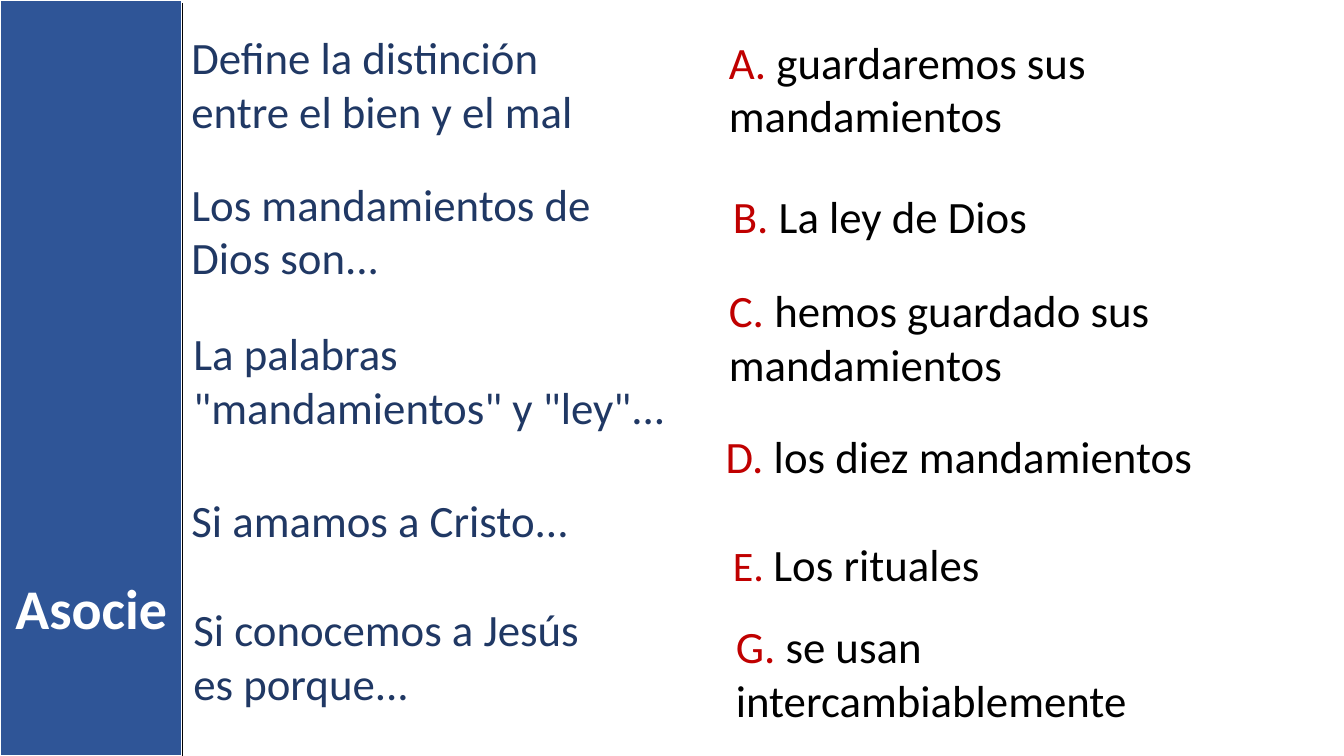
from dataclasses import dataclass

from lxml import etree
from pptx import Presentation
from pptx import util as u
from pptx.dml.color import RGBColor
from pptx.enum import shapes, text
from pptx.oxml.ns import qn


@dataclass(frozen=True)
class Theme:
    font: str = "Calibri"
    white: RGBColor = RGBColor(0xFF, 0xFF, 0xFF)
    black: RGBColor = RGBColor(0, 0, 0)
    sidebar: RGBColor = RGBColor(0x2F, 0x55, 0x97)
    prompt: RGBColor = RGBColor(0x20, 0x38, 0x64)
    letter: RGBColor = RGBColor(0xC0, 0, 0)
    title_size: u.Pt = u.Pt(40)
    body_size: u.Pt = u.Pt(32)
    small_letter_size: u.Pt = u.Pt(30)


theme = Theme()
presentation = Presentation()
presentation.slide_width = u.Inches(13.33)
presentation.slide_height = u.Inches(7.5)
slide = presentation.slides.add_slide(presentation.slide_layouts[5])


def box(left, top, width, height):
    """Turn percentages of the slide's width and height into lengths."""
    across, down = presentation.slide_width / 100, presentation.slide_height / 100
    return [round(length) for length in
            (left * across, top * down, width * across, height * down)]


def add_text(left, top, width, lines, runs):
    """Add one wrapped paragraph made of (words, colour, size) runs."""
    height = 8.53 if lines == 1 else 15.73
    frame = slide.shapes.add_textbox(*box(left, top, width, height)).text_frame
    frame.word_wrap = True
    frame.auto_size = text.MSO_AUTO_SIZE.SHAPE_TO_FIT_TEXT
    paragraph = frame.paragraphs[0]
    paragraph.font.name = theme.font
    for words, colour, size in runs:
        run = paragraph.add_run()
        run.text = words
        run.font.color.rgb = colour
        run.font.size = size


# Sidebar
SIDEBAR_WIDTH = 13.58
sidebar = slide.shapes.add_shape(shapes.MSO_SHAPE.RECTANGLE, *box(0, 0, SIDEBAR_WIDTH, 100))
sidebar.shadow.inherit = False
sidebar.fill.solid()
sidebar.fill.fore_color.rgb = theme.sidebar
sidebar.line.color.rgb = theme.white
sidebar.line.width = u.Pt(1.5)

# Prompts: left, top, width, lines, words
prompts = [
    (13.5, 3.33, 33.23, 2, "Define la distinción entre el bien y el mal"),
    (13.5, 22.67, 34.66, 2, "Los mandamientos de Dios son..."),
    (13.65, 42.4, 38.11, 2, 'La palabras "mandamientos" y "ley"...'),
    (13.5, 64.53, 34.51, 1, "Si amamos a Cristo..."),
    (13.65, 78.93, 33.08, 2, "Si conocemos a Jesús es porque..."),
]
for left, top, width, lines, words in prompts:
    add_text(left, top, width, lines, [(words, theme.prompt, theme.body_size)])

# Answers: left, top, width, lines, letter, words
answers = [
    (53.49, 3.87, 45.39, 2, "A", "guardaremos sus mandamientos"),
    (53.79, 24.27, 44.41, 1, "B", "La ley de Dios"),
    (53.49, 36.8, 43.06, 2, "C", "hemos guardado sus mandamientos"),
    (53.26, 56, 43.51, 1, "D", "los diez mandamientos"),
    (53.79, 70.4, 41.49, 1, "E", "Los rituales"),
    (54.01, 81.2, 41.94, 2, "G", "se usan intercambiablemente"),
]
for left, top, width, lines, letter, words in answers:
    letter_size = theme.small_letter_size if letter == "E" else theme.body_size
    add_text(left, top, width, lines, [
        (f"{letter}. ", theme.letter, letter_size),
        (words, theme.black, theme.body_size),
    ])

# Title, brought in front of the sidebar
title = slide.shapes.title
title.left, title.top, title.width, title.height = box(0, 75.2, SIDEBAR_WIDTH, 10.27)
title.text_frame.text = "Asocie"
title.text_frame.word_wrap = True
title.text_frame.auto_size = text.MSO_AUTO_SIZE.SHAPE_TO_FIT_TEXT
title.text_frame.vertical_anchor = text.MSO_ANCHOR.TOP
paragraph = title.text_frame.paragraphs[0]
paragraph.alignment = text.PP_ALIGN.CENTER
paragraph.font.name = theme.font
paragraph.font.size = theme.title_size
paragraph.font.bold = True
paragraph.font.color.rgb = theme.white
title.element.getparent().append(title.element)

# Edge of the sidebar
edge_x, edge_top, _, edge_length = box(SIDEBAR_WIDTH, 0.4, 0, 99.6)
edge = slide.shapes.add_connector(
    shapes.MSO_CONNECTOR.STRAIGHT, edge_x, edge_top, edge_x, edge_top + edge_length)
edge.line.color.rgb = theme.black
edge.line.width = u.Pt(1)
etree.SubElement(edge.element.spPr, qn("a:effectLst"))

presentation.save("out.pptx")
